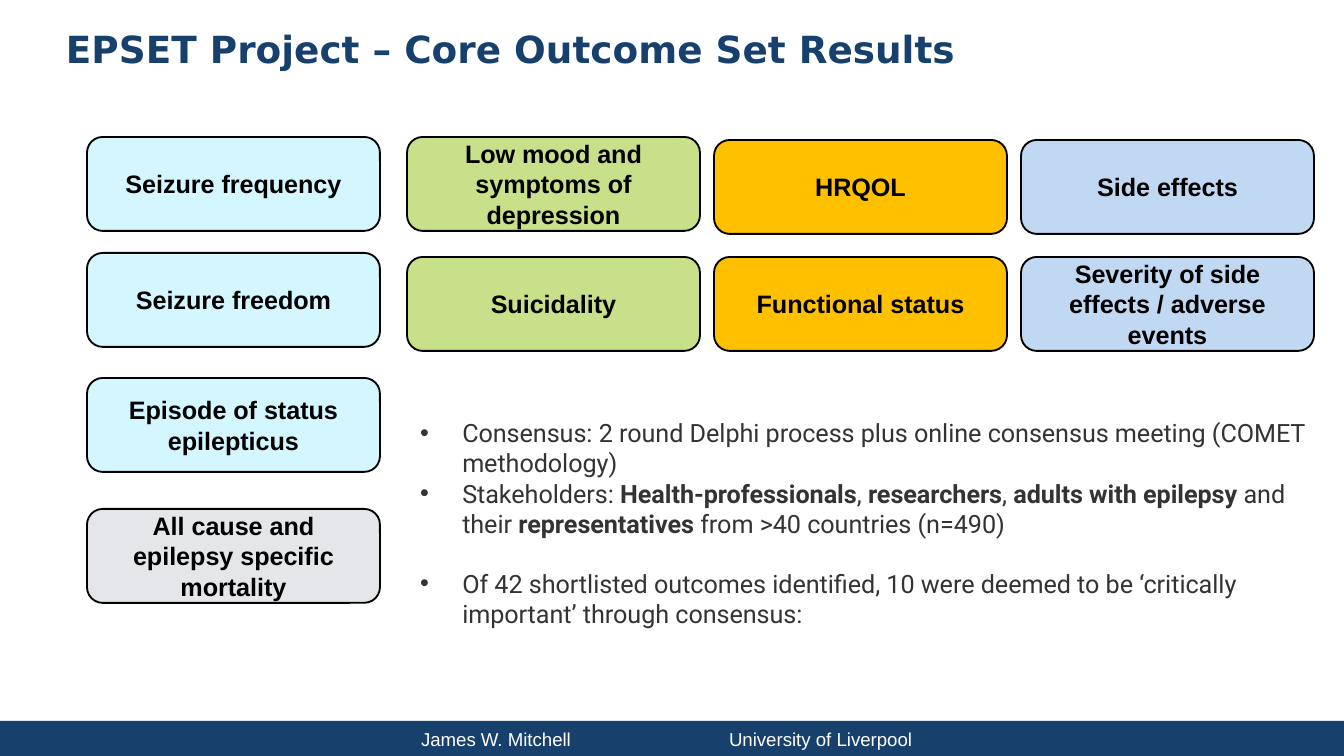
"""Build the slide with the core outcome set results of the EPSET project."""
from lxml import etree
from pptx import Presentation, util as u
from pptx.dml.color import RGBColor
from pptx.enum import shapes, text
from pptx.oxml import ns

EMU_PER_PX = 914400 / 134.4
NAVY = RGBColor(0x17, 0x40, 0x6D)
WHITE = RGBColor(0xFF, 0xFF, 0xFF)
BLACK = RGBColor(0x00, 0x00, 0x00)
CHARCOAL = RGBColor(0x33, 0x33, 0x33)
CYAN = RGBColor(0xD4, 0xF6, 0xFF)
GREY = RGBColor(0xE4, 0xE6, 0xE9)
GREEN = RGBColor(0xC8, 0xE0, 0x89)
AMBER = RGBColor(0xFF, 0xC0, 0x00)
BLUE = RGBColor(0xC1, 0xD8, 0xF2)

CARD_WIDTH, CARD_HEIGHT = 293, 94
OUTCOME_COLUMNS = [
    (87, [(137, "Seizure frequency", CYAN),
          (253, "Seizure freedom", CYAN),
          (378, "Episode of status epilepticus", CYAN),
          (509, "All cause and epilepsy specific mortality", GREY)]),
    (407, [(137, "Low mood and symptoms of depression", GREEN),
           (257, "Suicidality", GREEN)]),
    (714, [(140, "HRQOL", AMBER),
           (257, "Functional status", AMBER)]),
    (1021, [(140, "Side effects", BLUE),
            (257, "Severity of side effects / adverse events", BLUE)]),
]
FINDINGS = [
    (0, [("Consensus: 2 round Delphi process plus online consensus meeting "
          "(COMET methodology)", False)]),
    (0, [("Stakeholders: ", False), ("Health-professionals", True),
         (", ", False), ("researchers", True), (", ", False),
         ("adults with epilepsy ", True), ("and their ", False),
         ("representatives", True),
         (" from >40 countries (n=490)", False)]),
    (16, [("Of 42 shortlisted outcomes identified, 10 were deemed to be "
           "‘critically important’ through consensus:", False)]),
]


def px(length):
    """Turn a length in px into EMU."""
    return u.Emu(round(length * EMU_PER_PX))


def style_font(font, name, size, color, bold=None):
    """Set the face, size, colour and weight of a font."""
    font.name = name
    font.size = u.Pt(size)
    font.color.rgb = color
    font.bold = bold


def add_box(slide, kind, bounds, fill):
    """Add a filled shape without line or shadow, with wrapped text."""
    shape = slide.shapes.add_shape(kind, *map(px, bounds))
    shape.shadow.inherit = False
    shape.fill.solid()
    shape.fill.fore_color.rgb = fill
    shape.line.fill.background()
    shape.text_frame.word_wrap = True
    return shape


def add_title(slide, wording):
    """Place and format the title placeholder."""
    title = slide.shapes.title
    title.left, title.top, title.width, title.height = map(px, (66, 26, 1172, 109))
    frame = title.text_frame
    frame.margin_left = frame.margin_top = frame.margin_right = frame.margin_bottom = 0
    frame.vertical_anchor = text.MSO_ANCHOR.TOP
    frame.auto_size = text.MSO_AUTO_SIZE.NONE
    frame.text = wording
    paragraph = frame.paragraphs[0]
    paragraph.alignment = text.PP_ALIGN.LEFT
    style_font(paragraph.font, "DejaVu Sans", 20, NAVY, True)


def add_outcome(slide, left, top, wording, fill):
    """Add a rounded card that names one outcome."""
    card = add_box(slide, shapes.MSO_SHAPE.ROUNDED_RECTANGLE,
                   (left, top, CARD_WIDTH, CARD_HEIGHT), fill)
    card.line.color.rgb = BLACK
    card.line.width = u.Pt(1)
    card.text_frame.vertical_anchor = text.MSO_ANCHOR.MIDDLE
    paragraph = card.text_frame.paragraphs[0]
    paragraph.text = wording
    paragraph.alignment = text.PP_ALIGN.CENTER
    style_font(paragraph.font, "Arial", 13.5, BLACK, True)


def add_findings(slide, findings):
    """Add the bulleted account of the consensus process."""
    panel = add_box(slide, shapes.MSO_SHAPE.RECTANGLE, (407, 411, 918, 227), WHITE)
    frame = panel.text_frame
    frame.vertical_anchor = text.MSO_ANCHOR.TOP
    for index, (gap, runs) in enumerate(findings):
        paragraph = frame.add_paragraph() if index else frame.paragraphs[0]
        paragraph.alignment = text.PP_ALIGN.LEFT
        if gap:
            paragraph.space_before = u.Pt(gap)
        properties = paragraph._p.get_or_add_pPr()
        properties.set("marL", str(px(42)))
        properties.set("indent", str(px(-42)))
        etree.SubElement(properties, ns.qn("a:buFont"), typeface="Arial")
        etree.SubElement(properties, ns.qn("a:buChar"), char="•")
        style_font(paragraph.font, "Roboto", 13.5, CHARCOAL)
        for wording, bold in runs:
            run = paragraph.add_run()
            run.text = wording
            run.font.bold = bold


def add_footer(slide, author, affiliation):
    """Add the bottom bar with author and affiliation split by a tab stop."""
    bar = add_box(slide, shapes.MSO_SHAPE.RECTANGLE, (-8, 721, 1363, 36), NAVY)
    frame = bar.text_frame
    frame.margin_left = px(429)
    frame.margin_top = frame.margin_bottom = 0
    frame.vertical_anchor = text.MSO_ANCHOR.MIDDLE
    paragraph = frame.paragraphs[0]
    paragraph.text = f"{author}\t{affiliation}"
    paragraph.alignment = text.PP_ALIGN.LEFT
    tabs = etree.SubElement(paragraph._p.get_or_add_pPr(), ns.qn("a:tabLst"))
    etree.SubElement(tabs, ns.qn("a:tab"), pos=str(px(308)), algn="l")
    style_font(paragraph.font, "Arial", 10, WHITE)


def main():
    """Build and save the presentation."""
    presentation = Presentation()
    presentation.slide_width, presentation.slide_height = px(1344), px(756)
    slide = presentation.slides.add_slide(presentation.slide_layouts[5])
    add_footer(slide, "James W. Mitchell", "University of Liverpool")
    for left, outcomes in OUTCOME_COLUMNS:
        for top, wording, fill in outcomes:
            add_outcome(slide, left, top, wording, fill)
    add_title(slide, "EPSET Project – Core Outcome Set Results")
    add_findings(slide, FINDINGS)
    presentation.save("out.pptx")


if __name__ == "__main__":
    main()
